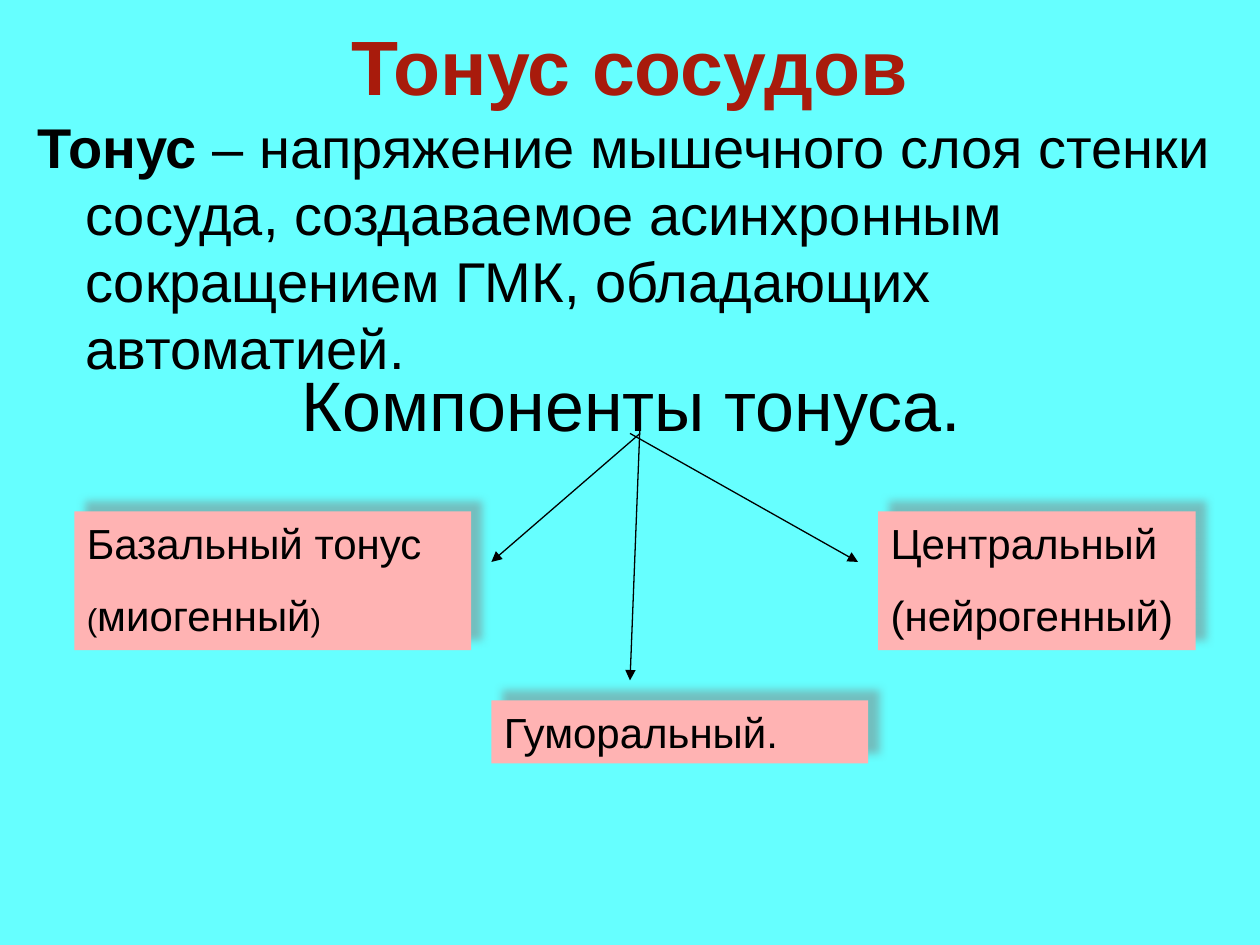
"""Build the slide on vascular tone and its three components."""
from dataclasses import dataclass

from lxml.etree import SubElement
from pptx import Presentation
from pptx.dml.color import RGBColor
from pptx.enum.shapes import MSO_CONNECTOR, MSO_SHAPE
from pptx.enum.text import MSO_ANCHOR as Anchor, PP_ALIGN as Align
from pptx.oxml.ns import qn
from pptx.util import Inches, Pt


@dataclass(frozen=True)
class Theme:
    font: str = "Arial"
    background: RGBColor = RGBColor(0x66, 0xFF, 0xFF)
    heading: RGBColor = RGBColor(0xA8, 0x1B, 0x0C)
    ink: RGBColor = RGBColor(0, 0, 0)
    box: RGBColor = RGBColor(0xFF, 0xB3, 0xB3)
    shadow: str = "808080"
    title_size: int = 44
    subtitle_size: int = 40
    body_size: int = 32
    label_size: int = 24
    bracket_size: int = 18


theme = Theme()


def write(shape, paragraphs, size, color=theme.ink, align=Align.LEFT,
          anchor=Anchor.TOP, space_before=0):
    """Fill a shape with paragraphs of (text, format overrides) runs."""
    frame = shape.text_frame
    frame.word_wrap = True
    frame.vertical_anchor = anchor
    for index, runs in enumerate(paragraphs):
        paragraph = frame.add_paragraph() if index else frame.paragraphs[0]
        paragraph.alignment = align
        paragraph.space_before = Pt(space_before if index else 0)
        for text, style in runs:
            run = paragraph.add_run()
            run.text = text
            run.font.name = theme.font
            run.font.size = Pt(style.get("size", size))
            run.font.bold = style.get("bold", False)
            run.font.color.rgb = color


deck = Presentation()
deck.slide_width, deck.slide_height = Inches(10), Inches(7.5)
slide = deck.slides.add_slide(deck.slide_layouts[5])
slide.background.fill.solid()
slide.background.fill.fore_color.rgb = theme.background

title = slide.shapes.title
title.left, title.top = Inches(0.5), Inches(0.13)
title.width, title.height = Inches(9), Inches(0.77)
write(title, [[("Тонус сосудов", {"bold": True})]], theme.title_size,
      color=theme.heading, align=Align.CENTER, anchor=Anchor.MIDDLE)

definition = slide.shapes.add_textbox(
    Inches(0.2), Inches(0.84), Inches(9.8), Inches(2.12))
write(definition, [[
    ("Тонус ", {"bold": True}),
    ("– напряжение мышечного слоя стенки сосуда, создаваемое асинхронным "
     "сокращением ГМК, обладающих автоматией.", {}),
]], theme.body_size)
hanging = definition.text_frame.paragraphs[0]._p.get_or_add_pPr()
hanging.set("marL", str(Inches(0.38)))
hanging.set("indent", str(-Inches(0.38)))

subtitle = slide.shapes.add_textbox(
    Inches(0.51), Inches(2.82), Inches(9), Inches(0.77))
write(subtitle, [[("Компоненты тонуса.", {})]], theme.subtitle_size,
      align=Align.CENTER, anchor=Anchor.MIDDLE)

bracket = {"size": theme.bracket_size}
components = [
    (0.59, 4.06, 3.15, 1.1, [
        [("Базальный тонус", {})],
        [("(", bracket), ("миогенный", {}), (")", bracket)]]),
    (6.97, 4.06, 2.52, 1.1, [
        [("Центральный", {})], [("(нейрогенный)", {})]]),
    (3.9, 5.56, 2.99, 0.5, [[("Гуморальный.", {})]]),
]
for left, top, width, height, label in components:
    component = slide.shapes.add_shape(
        MSO_SHAPE.RECTANGLE, Inches(left), Inches(top),
        Inches(width), Inches(height))
    component.fill.solid()
    component.fill.fore_color.rgb = theme.box
    component.line.fill.background()
    component.shadow.inherit = False
    effects = component._element.spPr.find(qn("a:effectLst"))
    shadow = SubElement(
        effects, qn("a:outerShdw"), blurRad=str(Pt(5)), dist=str(Pt(8.5)),
        dir=str(315 * 60000), algn="ctr", rotWithShape="0")
    tint = SubElement(shadow, qn("a:srgbClr"), val=theme.shadow)
    SubElement(tint, qn("a:alpha"), val="50000")
    write(component, label, theme.label_size, space_before=12)

branches = [
    (5.08, 3.44, 3.9, 4.46),
    (5, 3.44, 6.81, 4.46),
    (5.08, 3.36, 5, 5.4),
]
for branch in branches:
    arrow = slide.shapes.add_connector(
        MSO_CONNECTOR.STRAIGHT, *(Inches(value) for value in branch))
    arrow.line.color.rgb = theme.ink
    arrow.line.width = Pt(0.75)
    SubElement(arrow.line._get_or_add_ln(), qn("a:tailEnd"), type="triangle")
    SubElement(arrow._element.spPr, qn("a:effectLst"))

deck.save("out.pptx")
